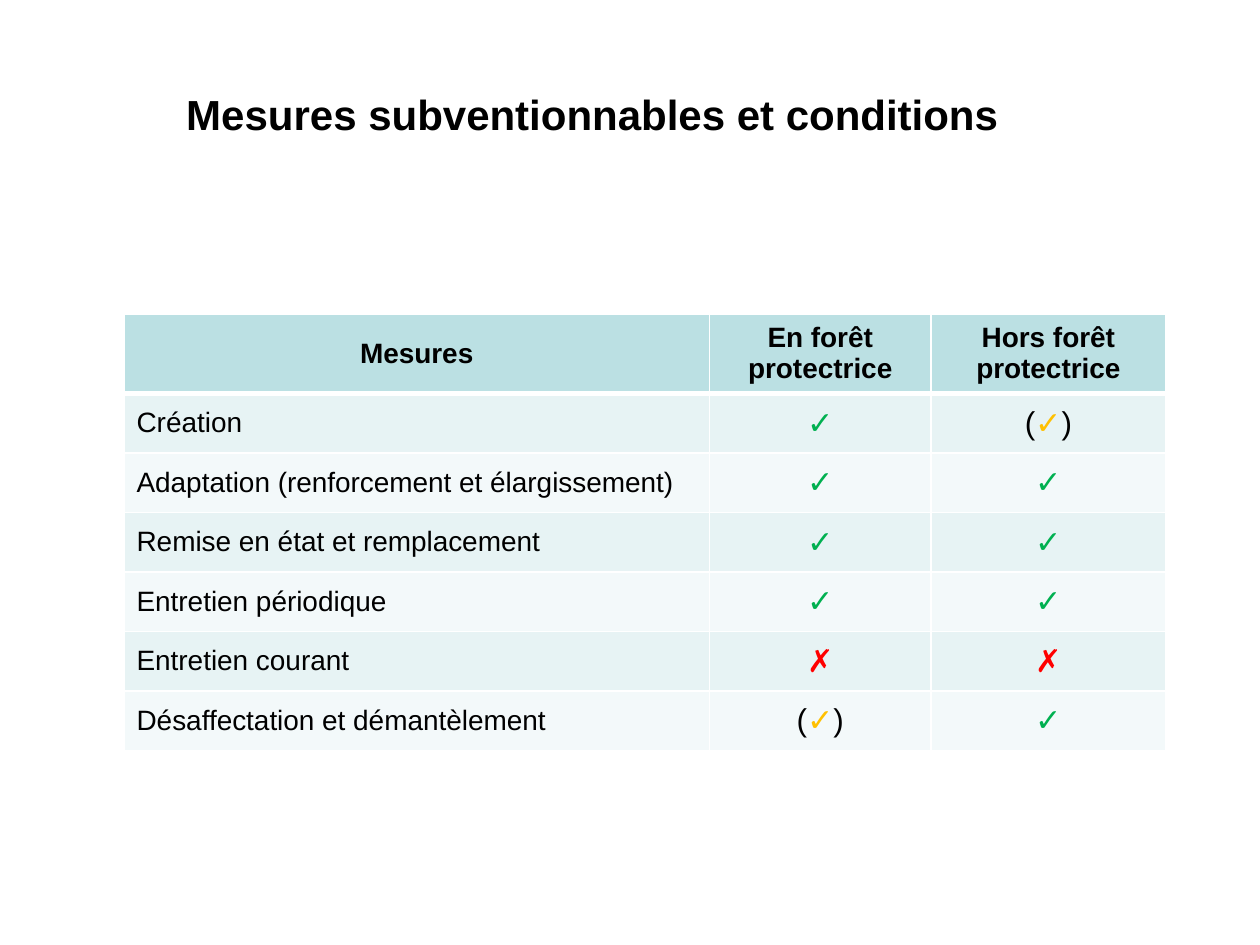
import pptx
import pptx.dml.color
import pptx.enum.text
import pptx.oxml
import pptx.oxml.ns
import pptx.util

Cm = pptx.util.Cm
Pt = pptx.util.Pt
ALIGN = pptx.enum.text.PP_ALIGN
MIDDLE = pptx.enum.text.MSO_ANCHOR.MIDDLE

TITLE = "Mesures subventionnables et conditions"
HEADERS = ["Mesures", "En forêt protectrice", "Hors forêt protectrice"]
YES = [("✓", "00B050")]
NO = [("✗", "FF0000")]
PARTLY = [("(", "000000"), ("✓", "FFC000"), (")", "000000")]
MEASURES = [
    ("Création", YES, PARTLY),
    ("Adaptation (renforcement et élargissement)", YES, YES),
    ("Remise en état et remplacement", YES, YES),
    ("Entretien périodique", YES, YES),
    ("Entretien courant", NO, NO),
    ("Désaffectation et démantèlement", PARTLY, YES),
]
COLUMN_WIDTHS = [11.8, 4.47, 4.73]
HEADER_HEIGHT, ROW_HEIGHT = 1.6, 1.2
HEADER_FILL, BAND_FILLS = "BBE0E3", ["E7F3F4", "F3F9FA"]


def color(value):
    return pptx.dml.color.RGBColor.from_string(value)


def format_font(font, size, value="000000", bold=False):
    font.name = "Arial"
    font.size = Pt(size)
    font.bold = bold
    font.color.rgb = color(value)


def set_borders(cell, widths):
    properties = cell._tc.get_or_add_tcPr()
    for side, width in widths.items():
        properties.append(pptx.oxml.parse_xml(
            f'<a:ln{side} {pptx.oxml.ns.nsdecls("a")} w="{Pt(width)}">'
            f'<a:solidFill><a:srgbClr val="FFFFFF"/></a:solidFill></a:ln{side}>'))


def fill_cell(cell, pieces, size, fill, alignment, top=1, bottom=1, bold=False):
    set_borders(cell, {"L": 1, "R": 1, "T": top, "B": bottom})
    cell.fill.solid()
    cell.fill.fore_color.rgb = color(fill)
    cell.vertical_anchor = MIDDLE
    paragraph = cell.text_frame.paragraphs[0]
    paragraph.alignment = alignment
    for text, value in pieces:
        run = paragraph.add_run()
        run.text = text
        format_font(run.font, size, value, bold)


def add_title(slide):
    title = slide.shapes.title
    title.left, title.top, title.width, title.height = Cm(3.5), Cm(1.32), Cm(20.62), Cm(1.96)
    title.text_frame.text = TITLE
    title.text_frame.vertical_anchor = MIDDLE
    paragraph = title.text_frame.paragraphs[0]
    paragraph.alignment = ALIGN.LEFT
    format_font(paragraph.runs[0].font, 24, bold=True)


def add_measures(slide):
    height = HEADER_HEIGHT + ROW_HEIGHT * len(MEASURES)
    table = slide.shapes.add_table(
        len(MEASURES) + 1, len(HEADERS),
        Cm(2.5), Cm(6.33), Cm(sum(COLUMN_WIDTHS)), Cm(height)).table
    for column, width in zip(table.columns, COLUMN_WIDTHS):
        column.width = Cm(width)
    for index, row in enumerate(table.rows):
        row.height = Cm(ROW_HEIGHT if index else HEADER_HEIGHT)
    for column, header in enumerate(HEADERS):
        fill_cell(table.cell(0, column), [(header, "000000")], 16, HEADER_FILL,
                  ALIGN.CENTER, bottom=3, bold=True)
    for row, (measure, *marks) in enumerate(MEASURES, 1):
        fill = BAND_FILLS[(row - 1) % 2]
        top = 3 if row == 1 else 1
        fill_cell(table.cell(row, 0), [(measure, "000000")], 16, fill, ALIGN.LEFT, top)
        for column, mark in enumerate(marks, 1):
            fill_cell(table.cell(row, column), mark, 18, fill, ALIGN.CENTER, top)


def main():
    presentation = pptx.Presentation()
    presentation.slide_width, presentation.slide_height = Cm(25.4), Cm(19.05)
    slide = presentation.slides.add_slide(presentation.slide_layouts[5])
    add_title(slide)
    add_measures(slide)
    presentation.save("out.pptx")


if __name__ == "__main__":
    main()
